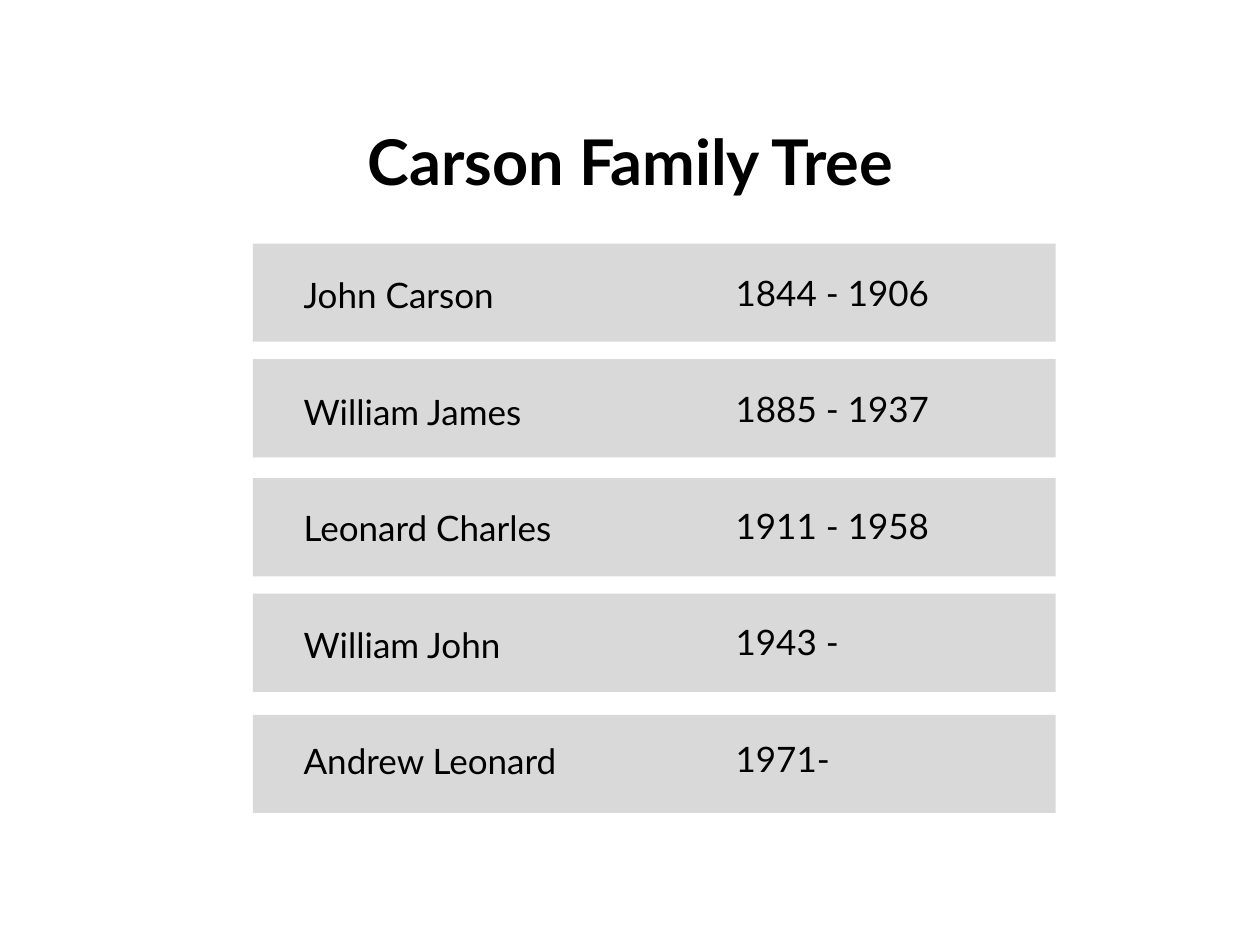
from pptx import Presentation
from pptx.dml.color import RGBColor
from pptx.enum.shapes import MSO_SHAPE
from pptx.enum.text import MSO_AUTO_SIZE
from pptx.util import Cm, Pt


def color(value):
    return RGBColor.from_string(value)


def add_text(page, text, left, top, width, height, size, bold=False):
    box = page.shapes.add_textbox(Cm(left), Cm(top), Cm(width), Cm(height))
    frame = box.text_frame
    frame.word_wrap = True
    frame.auto_size = MSO_AUTO_SIZE.SHAPE_TO_FIT_TEXT
    para = frame.paragraphs[0]
    span = para.add_run()
    span.text = text
    span.font.name = "Lato"
    span.font.size = Pt(size)
    span.font.bold = bold
    span.font.color.rgb = color("000000")


deck = Presentation()
deck.slide_width = Cm(25.4)
deck.slide_height = Cm(19.05)
page = deck.slides.add_slide(deck.slide_layouts[6])

add_text(page, "Carson Family Tree", 7.16, 2.34, 13, 1.8, 36, bold=True)

people = [
    ("John Carson", "1844 - 1906", 4.91),
    ("William James", "1885 - 1937", 7.24),
    ("Leonard Charles", "1911 - 1958", 9.64),
    ("William John", "1943 -", 11.97),
    ("Andrew Leonard", "1971-", 14.41),
]
row_pitch = 2.35

for row, (name, years, bar_top) in enumerate(people):
    bar = page.shapes.add_shape(
        MSO_SHAPE.RECTANGLE, Cm(5.1), Cm(bar_top), Cm(16.18), Cm(1.98)
    )
    bar.shadow.inherit = False
    bar.fill.solid()
    bar.fill.fore_color.rgb = color("D9D9D9")
    bar.line.fill.background()

    add_text(page, name, 5.87, 5.39 + row * row_pitch, 8.71, 1.12, 20)
    add_text(page, years, 14.58, 5.34 + row * row_pitch, 8.71, 1.12, 20)

deck.save("out.pptx")
